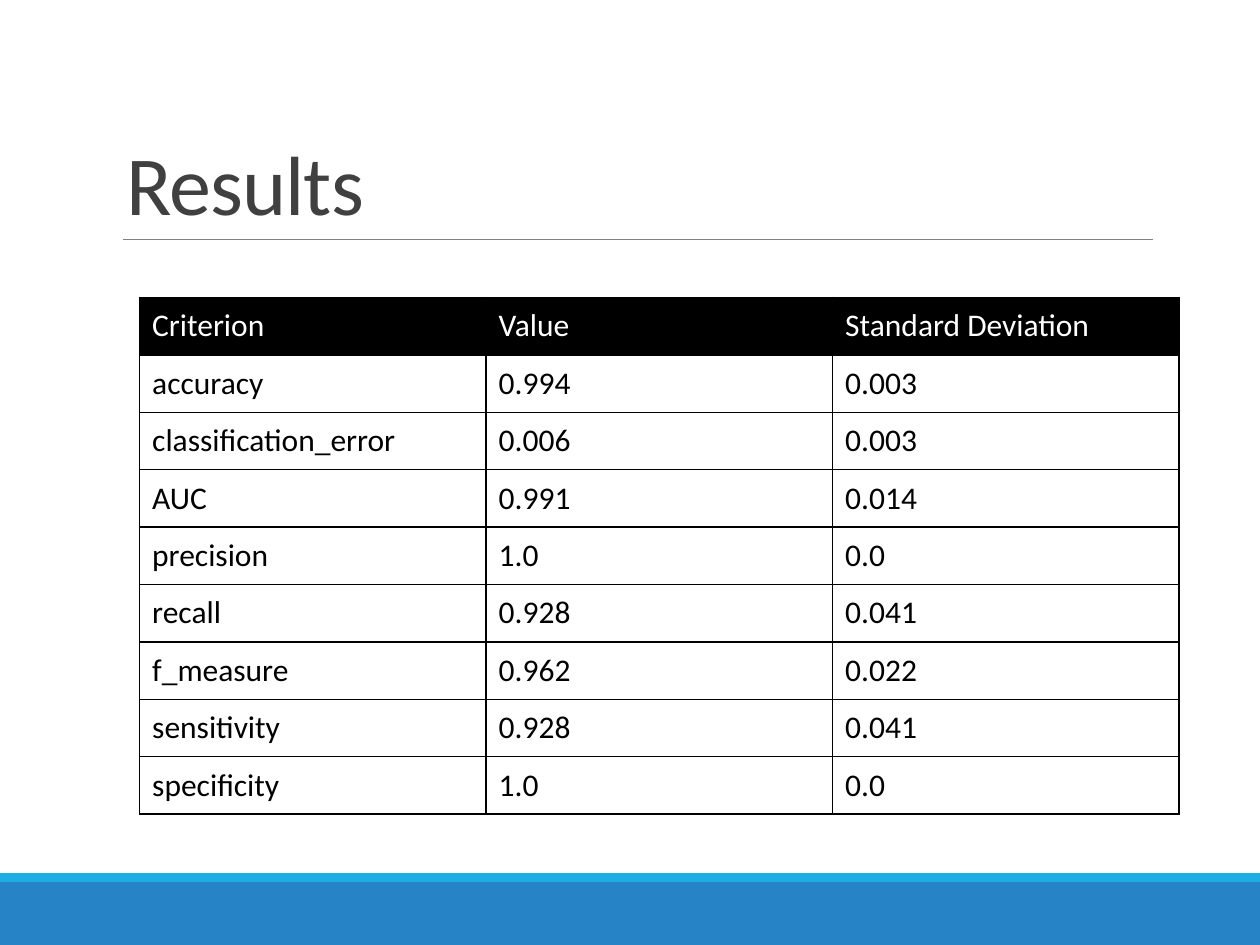
import dataclasses
import lxml.etree
import pptx
import pptx.dml.color
import pptx.enum.shapes
import pptx.enum.text
import pptx.oxml.ns
import pptx.util

Pt = pptx.util.Pt
qn = pptx.oxml.ns.qn


@dataclasses.dataclass(frozen=True)
class Theme:
    """Hold the colours, font and type sizes."""
    font: str = "Calibri"
    head: int = 48
    body: int = 18
    title: str = "404040"
    rule: str = "808080"
    band: str = "2683C6"
    strip: str = "1CADE4"
    black: str = "000000"
    white: str = "FFFFFF"


THEME = Theme()
ROWS = [
    ("Criterion", "Value", "Standard Deviation"),
    ("accuracy", "0.994", "0.003"),
    ("classification_error", "0.006", "0.003"),
    ("AUC", "0.991", "0.014"),
    ("precision", "1.0", "0.0"),
    ("recall", "0.928", "0.041"),
    ("f_measure", "0.962", "0.022"),
    ("sensitivity", "0.928", "0.041"),
    ("specificity", "1.0", "0.0"),
]


def rgb(code):
    """Turn a hex code into a colour."""
    return pptx.dml.color.RGBColor.from_string(code)


def add_run(para, text, size, color):
    """Add one styled run to a paragraph."""
    run = para.add_run()
    run.text = text
    run.font.name = THEME.font
    run.font.size = Pt(size)
    run.font.color.rgb = rgb(color)
    return run


def add_bar(slide, box, color):
    """Fill the box with a plain bar."""
    kind = pptx.enum.shapes.MSO_SHAPE.RECTANGLE
    bar = slide.shapes.add_shape(kind, *map(Pt, box))
    bar.shadow.inherit = False
    bar.fill.solid()
    bar.fill.fore_color.rgb = rgb(color)
    bar.line.fill.background()


def add_foot(slide, box, strip):
    """Draw the foot band with a thin strip along its top."""
    left, top, width, height = box
    add_bar(slide, (left, top + strip, width, height - strip), THEME.band)
    add_bar(slide, (left, top, width, strip), THEME.strip)


def add_title(slide, box, text, inset):
    """Set the title in the box with a rule along its foot."""
    left, top, width, height = box
    title = slide.shapes.title
    title.left, title.top, title.width, title.height = map(Pt, box)
    frame = title.text_frame
    frame.word_wrap = True
    frame.auto_size = pptx.enum.text.MSO_AUTO_SIZE.NONE
    frame.vertical_anchor = pptx.enum.text.MSO_ANCHOR.BOTTOM
    para = frame.paragraphs[0]
    para.alignment = pptx.enum.text.PP_ALIGN.LEFT
    para.line_spacing = 0.85
    run = add_run(para, text, THEME.head, THEME.title)
    run.font._element.set("spc", "-50")
    base = top + height
    ends = map(Pt, (left + inset, base, left + width, base))
    rule = slide.shapes.add_connector(pptx.enum.shapes.MSO_CONNECTOR.STRAIGHT, *ends)
    rule.line.color.rgb = rgb(THEME.rule)
    rule.line.width = Pt(0.5)
    lxml.etree.SubElement(rule._element.spPr, qn("a:effectLst"))


def add_edges(cell, color, width):
    """Line all four sides of a cell."""
    props = cell._tc.get_or_add_tcPr()
    for side in "LRTB":
        line = lxml.etree.SubElement(props, qn("a:ln" + side), w=str(Pt(width)))
        fill = lxml.etree.SubElement(line, qn("a:solidFill"))
        lxml.etree.SubElement(fill, qn("a:srgbClr"), val=color)


def add_cell(cell, text, head):
    """Write and style one table cell."""
    cell.vertical_anchor = pptx.enum.text.MSO_ANCHOR.MIDDLE
    add_edges(cell, THEME.black, 1)
    if head:
        cell.fill.solid()
        cell.fill.fore_color.rgb = rgb(THEME.black)
    else:
        cell.fill.background()
    color = THEME.white if head else THEME.black
    add_run(cell.text_frame.paragraphs[0], text, THEME.body, color)


def add_grid(slide, box, rows):
    """Fill the box with an even table headed by its first row."""
    left, top, width, height = box
    shape = slide.shapes.add_table(len(rows), len(rows[0]), *map(Pt, box))
    table = shape.table
    table.horz_banding = False
    for col in table.columns:
        col.width = Pt(width / len(rows[0]))
    for row in table.rows:
        row.height = Pt(height / len(rows))
    for i, row in enumerate(rows):
        for j, text in enumerate(row):
            add_cell(table.cell(i, j), text, i == 0)


def main():
    """Build and save the results slide."""
    deck = pptx.Presentation()
    deck.slide_width, deck.slide_height = Pt(720), Pt(540)
    slide = deck.slides.add_slide(deck.slide_layouts.get_by_name("Title Only"))
    add_foot(slide, (0, 499, 720, 41), 5)
    add_title(slide, (65, 22.5, 594, 114.3), "Results", 5.5)
    add_grid(slide, (79.8, 170, 594, 295.2), ROWS)
    deck.save("out.pptx")


if __name__ == "__main__":
    main()
